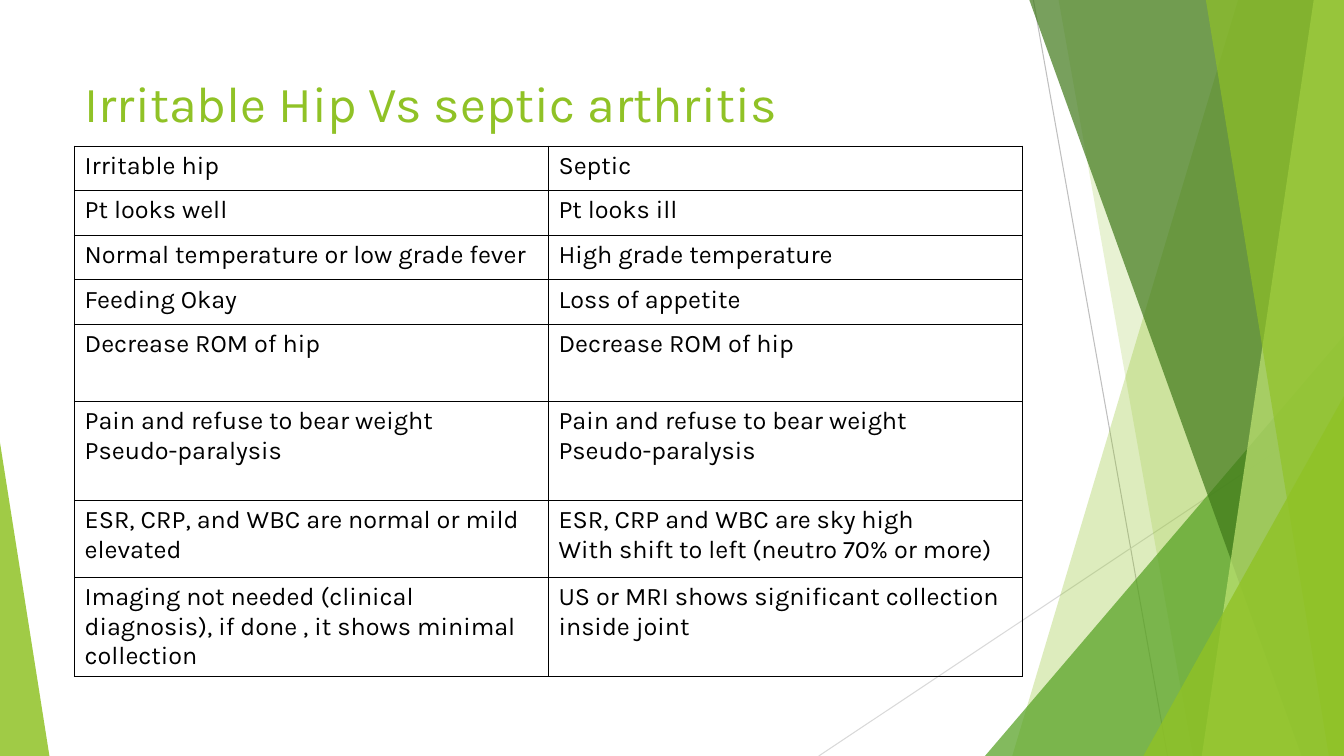
from lxml import etree
from pptx import Presentation
from pptx import util as u
from pptx.dml.color import RGBColor
from pptx.enum import shapes, text
from pptx.oxml import ns

WIDTH, HEIGHT = u.Inches(13.33), u.Inches(7.5)
FONT = "Karla"
LEFT, SPAN = 5.55, 70.52
LIME = "90C226"
ROW_HEIGHTS = [5.9, 5.9, 5.9, 5.9, 10.2, 13.1, 10.2, 13.1]
COMPARISON = [
    ("Irritable hip", "Septic"),
    ("Pt looks well", "Pt looks ill"),
    ("Normal temperature or low grade fever", "High grade temperature"),
    ("Feeding Okay", "Loss of appetite"),
    ("Decrease ROM of hip",) * 2,
    ("Pain and refuse to bear weight\nPseudo-paralysis",) * 2,
    ("ESR, CRP, and WBC are normal or mild elevated",
     "ESR, CRP and WBC are sky high\nWith shift to left (neutro 70% or more)"),
    ("Imaging not needed (clinical diagnosis), if done , it shows minimal collection",
     "US or MRI shows significant collection inside joint"),
]


def across(share):
    """Turn a percentage of the slide's width into a length."""
    return u.Emu(round(WIDTH * share / 100))


def down(share):
    """Turn a percentage of the slide's height into a length."""
    return u.Emu(round(HEIGHT * share / 100))


def add_element(parent, tag, **attributes):
    """Append a DrawingML element and return it."""
    return etree.SubElement(parent, ns.qn(tag), attributes)


def set_color(target, color):
    """Apply a hex colour to a font, fill or line colour."""
    target.rgb = RGBColor.from_string(color)


def paint(shape, color, opacity):
    """Give a shape a translucent fill without outline or shadow."""
    shape.shadow.inherit = False
    shape.line.fill.background()
    shape.fill.solid()
    set_color(shape.fill.fore_color, color)
    tint = shape.fill._xPr.find(".//" + ns.qn("a:srgbClr"))
    add_element(tint, "a:alpha", val=str(opacity * 1000))


def add_ray(page, start, end, color):
    """Draw a thin line between two points of the slide."""
    ray = page.shapes.add_connector(
        shapes.MSO_CONNECTOR.STRAIGHT,
        across(start[0]), down(start[1]), across(end[0]), down(end[1]))
    ray.line.width = u.Pt(0.75)
    set_color(ray.line.color, color)
    add_element(ray._element.spPr, "a:effectLst")


def add_panel(page, top, bottom, color, opacity):
    """Draw a full-height panel from a slanted edge to the right side."""
    outline = page.shapes.build_freeform(across(top), 0, scale=1.0)
    outline.add_line_segments(
        [(WIDTH, 0), (WIDTH, HEIGHT), (across(bottom), HEIGHT)], close=True)
    paint(outline.convert_to_shape(), color, opacity)


def add_corner(page, left, right, top, apex, color, opacity):
    """Draw a right triangle that stands on the slide's lower edge."""
    corner = page.shapes.add_shape(
        shapes.MSO_SHAPE.ISOSCELES_TRIANGLE, across(left), down(top),
        across(right - left), down(100 - top))
    corner.adjustments[0] = apex
    paint(corner, color, opacity)


def write(frame, words, size=18, color="000000"):
    """Write left-aligned text, one paragraph for each line of words."""
    frame.text = words
    frame.word_wrap = True
    frame.vertical_anchor = text.MSO_ANCHOR.TOP
    for para in frame.paragraphs:
        para.alignment = text.PP_ALIGN.LEFT
        for span in para.runs:
            span.font.name = FONT
            span.font.size = u.Pt(size)
            set_color(span.font.color, color)


def add_title(page, words):
    """Place and format the title placeholder."""
    title = page.shapes.title
    title.left, title.top = across(LEFT), down(8.93)
    title.width, title.height = across(SPAN), down(12.53)
    write(title.text_frame, words, size=36, color=LIME)
    title.text_frame.auto_size = text.MSO_AUTO_SIZE.NONE


def add_borders(cell):
    """Outline a cell in black and leave it unfilled."""
    properties = cell._tc.get_or_add_tcPr()
    for side in "LRTB":
        border = add_element(properties, f"a:ln{side}", w=str(u.Pt(1)))
        fill = add_element(border, "a:solidFill")
        add_element(fill, "a:srgbClr", val="000000")
    cell.fill.background()


def add_comparison(page, rows, heights):
    """Add the bordered comparison table."""
    table = page.shapes.add_table(
        len(rows), len(rows[0]), across(LEFT), down(19.33),
        across(SPAN), down(sum(heights))).table
    table.first_row = table.horz_banding = False
    for row, height, entries in zip(table.rows, heights, rows):
        row.height = down(height)
        for cell, words in zip(row.cells, entries):
            write(cell.text_frame, words)
            add_borders(cell)


def add_backdrop(page):
    """Draw the green facets and thin rays."""
    add_ray(page, (76.89, 0), (86.87, 100), "BFBFBF")
    add_ray(page, (100, 53.73), (60.92, 100), "D9D9D9")
    add_panel(page, 92.12, 75.32, LIME, 30)
    add_panel(page, 78.77, 88.75, LIME, 20)
    add_corner(page, 73.29, 100, 44.4, 1, "54A021", 72)
    add_panel(page, 76.59, 96.85, "3F7819", 70)
    add_panel(page, 97.75, 89.42, "C0E474", 70)
    add_panel(page, 89.72, 98.87, LIME, 65)
    add_corner(page, 85.07, 100, 52.4, 1, LIME, 80)
    add_corner(page, 0, 3.68, 58.53, 0, LIME, 85)


def main():
    """Build and save the slide."""
    deck = Presentation()
    deck.slide_width, deck.slide_height = WIDTH, HEIGHT
    page = deck.slides.add_slide(deck.slide_layouts.get_by_name("Title Only"))
    add_backdrop(page)
    add_title(page, "Irritable Hip Vs septic arthritis")
    add_comparison(page, COMPARISON, ROW_HEIGHTS)
    deck.save("out.pptx")


if __name__ == "__main__":
    main()
